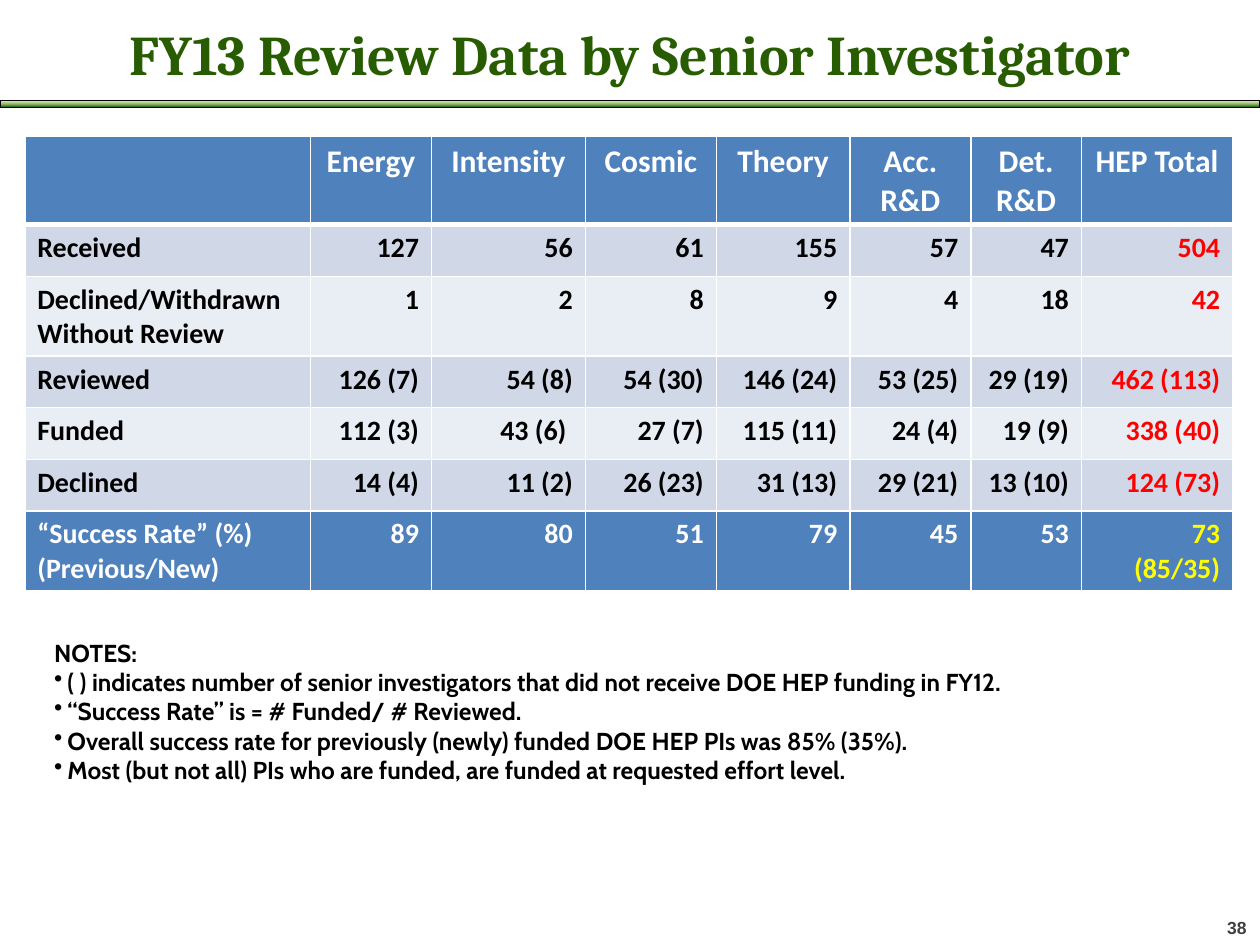
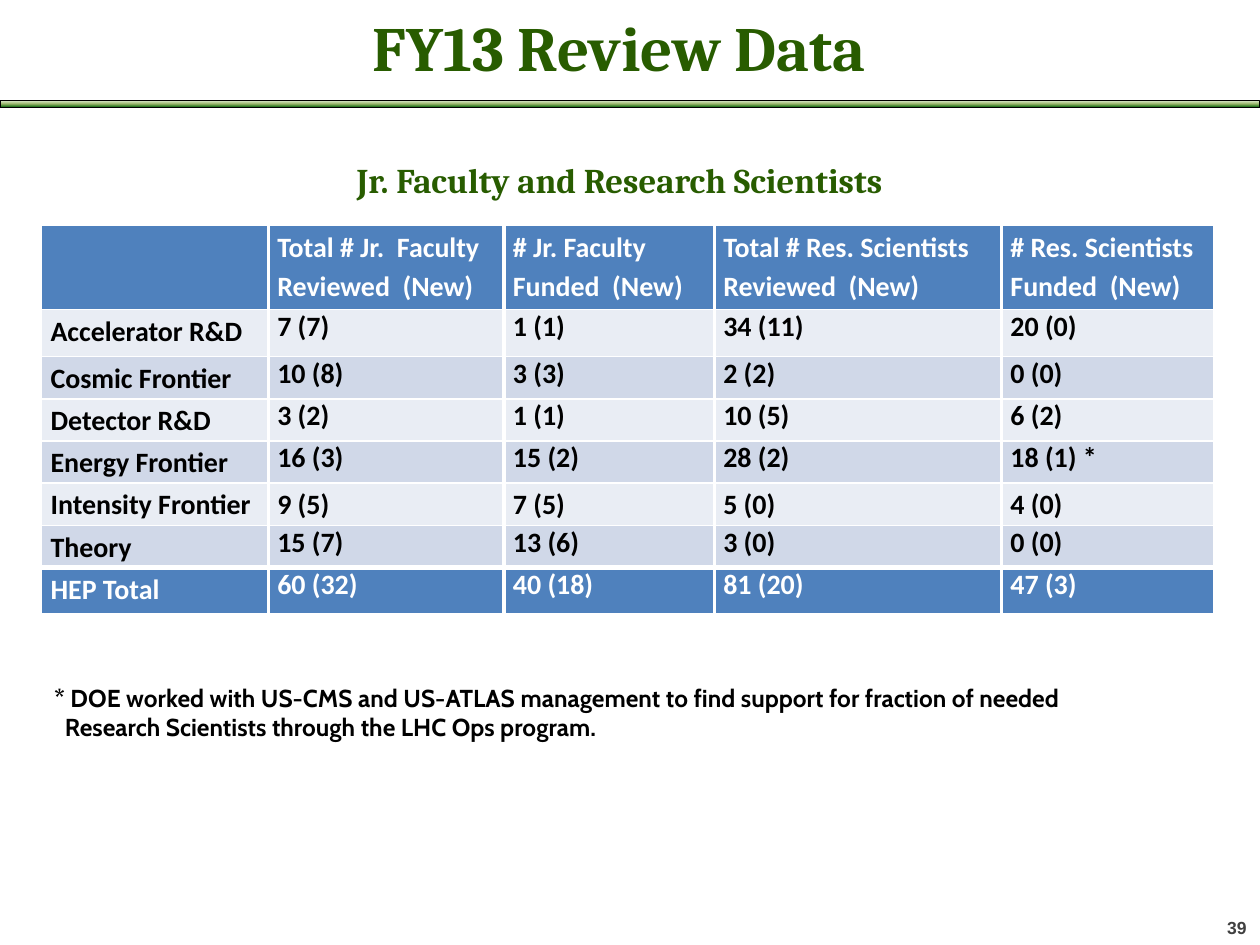
import dataclasses

import lxml.etree
import pptx
import pptx.dml.color
import pptx.enum.shapes
import pptx.enum.text
import pptx.oxml.ns
import pptx.util

Cm, Pt = pptx.util.Cm, pptx.util.Pt
qn = pptx.oxml.ns.qn
ALIGN = pptx.enum.text.PP_ALIGN
ANCHOR = pptx.enum.text.MSO_ANCHOR


@dataclasses.dataclass(frozen=True)
class Theme:
    # Colours
    green: str = "285C00"
    blue: str = "4F81BD"
    band_dark: str = "D0D8E8"
    band_light: str = "E9EDF4"
    white: str = "FFFFFF"
    black: str = "000000"
    red: str = "FF0000"
    yellow: str = "FFFF00"
    grey: str = "404040"
    rule: tuple = ((0, "DDEBCF"), (50, "9CB86E"), (100, "156B13"))
    # Fonts
    title_font: str = "Cambria"
    table_font: str = "Calibri"
    note_font: str = "Cabin"
    number_font: str = "Arial"
    # Type sizes
    title: float = 32
    big_title: float = 36
    subtitle: float = 19.8
    head: float = 18
    body: float = 16
    note: float = 14
    number: float = 10


T = Theme()

# Boxes are left, top, width, height in centimetres
SLIDE_SIZE = (25.4, 19.05)
RULE_BOX = (0, 2.03, 25.4, 0.13)
NUMBER_BOX = (24.49, 18.36, 0.91, 0.69)

INVESTIGATORS = [
    ["", "Energy", "Intensity", "Cosmic", "Theory", "Acc. R&D", "Det. R&D", "HEP Total"],
    ["Received", "127", "56", "61", "155", "57", "47", "504"],
    ["Declined/Withdrawn\nWithout Review", "1", "2", "8", "9", "4", "18", "42"],
    ["Reviewed", "126 (7)", "54 (8)", "54 (30)", "146 (24)", "53 (25)", "29 (19)", "462 (113)"],
    ["Funded", "112 (3)", "43 (6) ", "27 (7)", "115 (11)", "24 (4)", "19 (9)", "338 (40)"],
    ["Declined", "14 (4)", "11 (2)", "26 (23)", "31 (13)", "29 (21)", "13 (10)", "124 (73)"],
    ["“Success Rate” (%)\n(Previous/New)", "89", "80", "51", "79", "45", "53", "73\n(85/35)"],
]

JUNIORS = [
    ["", "Total # Jr.  Faculty Reviewed  (New)", "# Jr. Faculty Funded  (New)",
     "Total # Res. Scientists Reviewed  (New)", "# Res. Scientists Funded  (New)"],
    ["Accelerator R&D", "7 (7)", "1 (1)", "34 (11)", "20 (0)"],
    ["Cosmic Frontier", "10 (8)", "3 (3)", "2 (2)", "0 (0)"],
    ["Detector R&D", "3 (2)", "1 (1)", "10 (5)", "6 (2)"],
    ["Energy Frontier", "16 (3)", "15 (2)", "28 (2)", "18 (1) *"],
    ["Intensity Frontier", "9 (5)", "7 (5)", "5 (0)", "4 (0)"],
    ["Theory", "15 (7)", "13 (6)", "3 (0)", "0 (0)"],
    ["HEP Total", "60 (32)", "40 (18)", "81 (20)", "47 (3)"],
]

NOTES = [
    "( ) indicates number of senior investigators that did not receive DOE HEP funding in FY12.",
    "“Success Rate” is = # Funded/ # Reviewed.",
    "Overall success rate for previously (newly) funded DOE HEP PIs was 85% (35%).",
    "Most (but not all) PIs who are funded, are funded at requested effort level.",
]

FOOTNOTE = [
    "* DOE worked with US-CMS and US-ATLAS management to find support for fraction of needed",
    "Research Scientists through the LHC Ops program.",
]


def rgb(value):
    return pptx.dml.color.RGBColor.from_string(value)


def cms(box):
    return [Cm(v) for v in box]


def set_all(obj, values):
    for name, value in values.items():
        setattr(obj, name, value)


def write(tf, lines, font, size, color, **para):
    """Fill a text frame with one bold paragraph per line."""
    for i, line in enumerate(lines):
        p = tf.paragraphs[0] if i == 0 else tf.add_paragraph()
        set_all(p, para)
        r = p.add_run()
        r.text = line
        set_all(r.font, {"name": font, "size": Pt(size), "bold": True})
        r.font.color.rgb = rgb(color)
    return tf.paragraphs


def text_box(s, box, wrap=True, anchor=ANCHOR.TOP):
    tf = s.shapes.add_textbox(*cms(box)).text_frame
    set_all(tf, {"word_wrap": wrap, "vertical_anchor": anchor})
    return tf


def indent(p, left, first=0, bullet=None):
    pPr = p._p.get_or_add_pPr()
    pPr.set("marL", str(Cm(left)))
    pPr.set("indent", str(Cm(first)))
    if bullet:
        lxml.etree.SubElement(pPr, qn("a:buChar")).set("char", bullet)


# Shared slide parts
def title(s, box, text, size):
    tf = text_box(s, box, anchor=ANCHOR.MIDDLE)
    write(tf, [text], T.title_font, size, T.green, alignment=ALIGN.CENTER)
    return tf


def rule(s, box):
    sp = s.shapes.add_shape(pptx.enum.shapes.MSO_SHAPE.RECTANGLE, *cms(box))
    sp.shadow.inherit = False
    sp.line.color.rgb = rgb(T.black)
    sp.line.width = Pt(0.5)
    sp.fill.gradient()
    sp.fill.gradient_angle = 270
    stops = sp._element.spPr.find(".//" + qn("a:gsLst"))
    stops.clear()
    for pos, color in T.rule:
        gs = lxml.etree.SubElement(stops, qn("a:gs"), pos=str(pos * 1000))
        lxml.etree.SubElement(gs, qn("a:srgbClr"), val=color)


def page_number(s, box, number):
    write(text_box(s, box, wrap=False), [str(number)], T.number_font, T.number, T.grey)


def base_slide(prs, number):
    s = prs.slides.add_slide(prs.slide_layouts[6])
    rule(s, RULE_BOX)
    page_number(s, NUMBER_BOX, number)
    return s


# Tables
def borders(cell, **widths):
    tcPr = cell._tc.get_or_add_tcPr()
    for side in "LRTB":
        ln = lxml.etree.SubElement(tcPr, qn("a:ln" + side), w=str(Pt(widths[side])))
        fill = lxml.etree.SubElement(ln, qn("a:solidFill"))
        lxml.etree.SubElement(fill, qn("a:srgbClr"), val=T.white)


def data_table(s, box, rows, col_widths, row_heights, look):
    """Draw rows; look(row, column) returns the format of one cell."""
    tbl = s.shapes.add_table(len(rows), len(rows[0]), *cms(box)).table
    set_all(tbl, {"first_row": False, "horz_banding": False})
    for col, width in zip(tbl.columns, col_widths):
        col.width = Cm(width)
    for row, height in zip(tbl.rows, row_heights):
        row.height = Cm(height)
    for i, row in enumerate(rows):
        for j, text in enumerate(row):
            cell, fmt = tbl.cell(i, j), look(i, j)
            set_all(cell, fmt.get("cell", {}))
            borders(cell, **fmt["borders"])
            cell.fill.solid()
            cell.fill.fore_color.rgb = rgb(fmt["fill"])
            write(cell.text_frame, text.split("\n"), T.table_font,
                  fmt["size"], fmt["color"], **fmt["para"])


def investigator_look(i, j):
    last_row, last_col = len(INVESTIGATORS) - 1, len(INVESTIGATORS[0]) - 1
    strong = i in (0, last_row)
    color = T.white if strong else T.black
    if i and j == last_col:
        color = T.yellow if strong else T.red
    align = ALIGN.CENTER if i == 0 else ALIGN.RIGHT if j else ALIGN.LEFT
    return {
        "fill": T.blue if strong else T.band_dark if i % 2 else T.band_light,
        "color": color,
        "size": T.body if i else T.head,
        "para": {"alignment": align},
        "borders": {"L": 1, "R": 1, "T": 3 if i == 1 else 1, "B": 1 if i else 3},
    }


def junior_look(i, j):
    last_row, last_col = len(JUNIORS) - 1, len(JUNIORS[0]) - 1
    strong = i in (0, last_row)
    loose = i == 0 or j == 0 or JUNIORS[i][0] == "Intensity Frontier"
    return {
        "fill": T.blue if strong else T.band_light if i % 2 else T.band_dark,
        "color": T.white if strong else T.black,
        "size": T.body,
        "para": {"line_spacing": 1.15 if loose else 1.0},
        "cell": {"margin_left": Cm(0.18), "margin_right": Cm(0.18),
                 "margin_top": 0, "margin_bottom": 0},
        "borders": {"L": 2.25 if j else 1, "R": 1 if j == last_col else 2.25,
                    "T": 3 if i == last_row else 1,
                    "B": 3 if i == last_row - 1 else 1},
    }


# Notes below the tables
def notes(s, box):
    ps = write(text_box(s, box), ["NOTES:"] + NOTES, T.note_font, T.note, T.black)
    for p in ps[1:]:
        indent(p, 0.27, -0.27, "•")


def footnote(s, box):
    ps = write(text_box(s, box), FOOTNOTE, T.note_font, T.note, T.black)
    indent(ps[1], 0.22)


# Slides
def investigator_slide(prs):
    s = base_slide(prs, 38)
    title(s, (1.27, 0.08, 22.86, 1.98), "FY13 Review Data by Senior Investigator", T.title)
    data_table(s, (0.5, 2.75, 24.35, 9.11), INVESTIGATORS,
               [5.76, 2.44, 3.1, 2.64, 2.69, 2.44, 2.23, 3.05],
               [1.75, 1.04, 1.6, 1.04, 1.04, 1.04, 1.6], investigator_look)
    notes(s, (0.84, 12.73, 22.43, 3.94))


def junior_slide(prs):
    s = base_slide(prs, 39)
    tf = title(s, (0.84, 0.84, 23.29, 2.54), "FY13 Review Data", T.big_title)
    p = tf.add_paragraph()
    set_all(p, {"alignment": ALIGN.CENTER, "space_before": Pt(43)})
    r = p.add_run()
    r.text = "Jr. Faculty and Research Scientists"
    set_all(r.font, {"name": T.title_font, "size": Pt(T.subtitle), "bold": True})
    r.font.color.rgb = rgb(T.green)
    data_table(s, (0.84, 4.55, 23.62, 7.82), JUNIORS,
               [4.57, 4.75, 4.24, 5.79, 4.27],
               [1.69, 0.95] + [0.85] * 5 + [0.93], junior_look)
    footnote(s, (0.84, 13.64, 22.43, 1.45))


def main():
    prs = pptx.Presentation()
    prs.slide_width, prs.slide_height = cms(SLIDE_SIZE)
    investigator_slide(prs)
    junior_slide(prs)
    prs.save("out.pptx")


if __name__ == "__main__":
    main()
